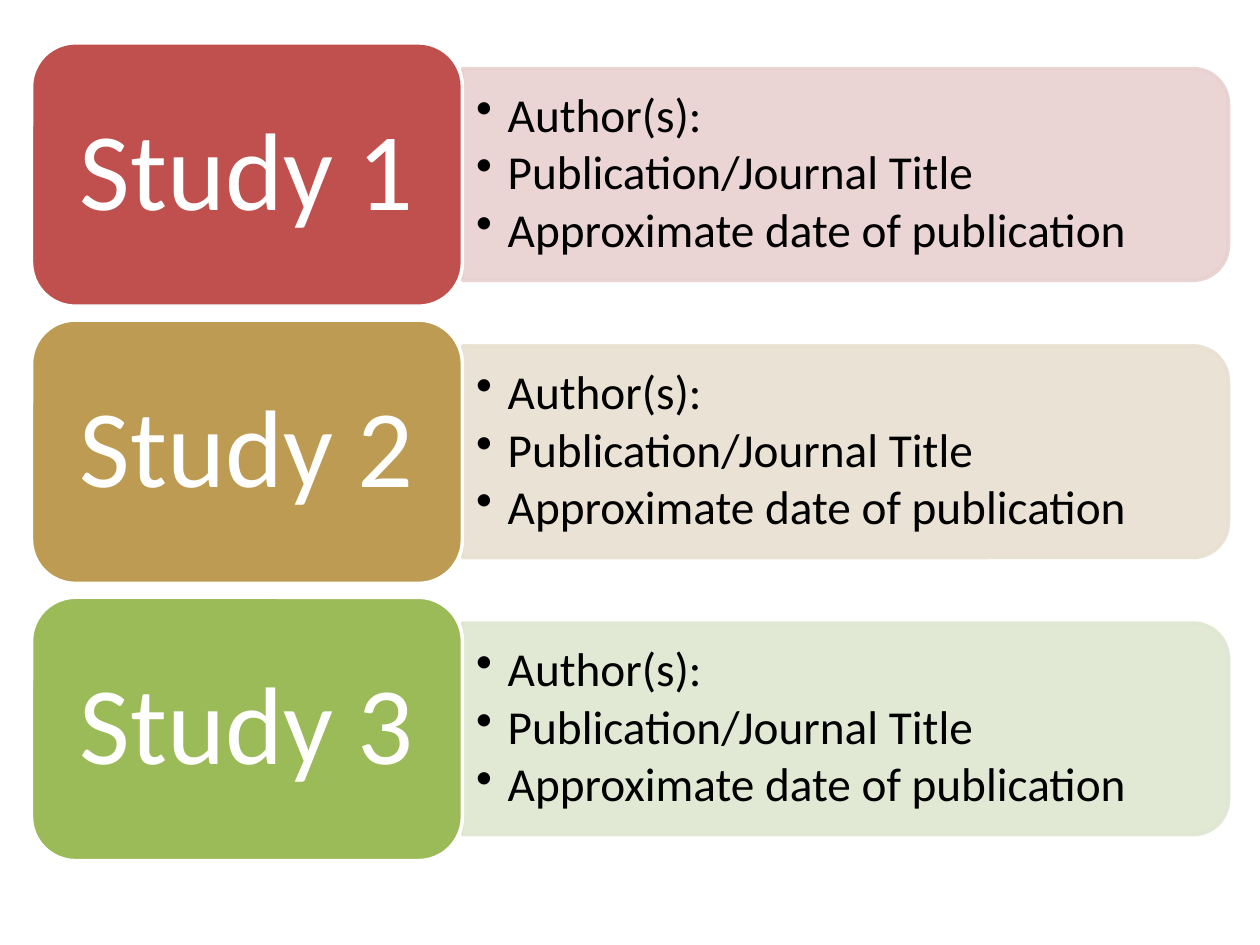
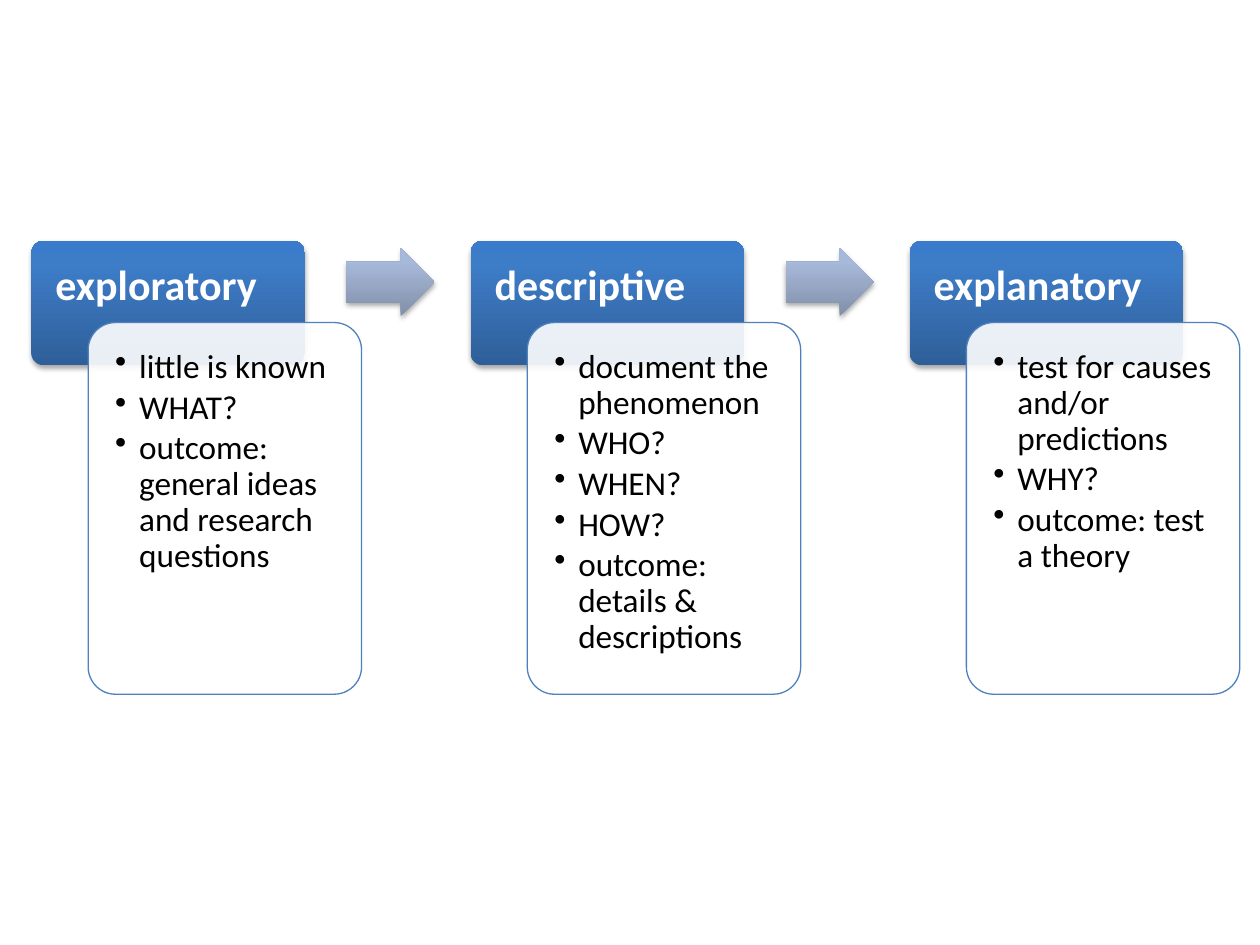
"""Build two diagram slides: a list of three studies and the three kinds of research."""
from lxml.etree import SubElement
from pptx import Presentation
from pptx.dml.color import RGBColor
from pptx.enum.shapes import MSO_SHAPE as Preset
from pptx.enum.text import MSO_ANCHOR as Anchor, PP_ALIGN as Align
from pptx.oxml.ns import qn
from pptx.util import Inches, Pt

COLORS = {
    "white": "FFFFFF", "black": "000000", "outline": "4F81BD",
    "red": "C0504D", "red_tint": "E8D0D0",
    "gold": "BD9B53", "gold_tint": "E8E1D1",
    "green": "9BBB59", "green_tint": "DEE7D1",
    "label_low": "2F5F99", "label_mid": "3D7CC7", "label_high": "3A7CCB",
    "arrow_low": "818FA8", "arrow_mid": "A7B9DA", "arrow_high": "A7BADC",
}
FONT = "Calibri"
MARGIN = 0.25


def add_block(page, preset, at, fill, line=None, weight=0, opacity=100, line_opacity=100, adjust=()):
    """Add a shape with a plain fill, or a shaded one with a shadow if fill names a gradient."""
    block = page.shapes.add_shape(preset, *map(Inches, at))
    block.shadow.inherit = False
    for index, value in enumerate(adjust):
        block.adjustments[index] = value
    properties = block._element.spPr
    if fill in COLORS:
        block.fill.solid()
        block.fill.fore_color.rgb = RGBColor.from_string(COLORS[fill])
    else:
        block.fill.gradient()
        block.fill.gradient_angle = 90
        stops = properties.find(".//" + qn("a:gsLst"))
        stops.clear()
        for name, place in (("low", 0), ("mid", 80), ("high", 100)):
            stop = SubElement(stops, qn("a:gs"), pos=str(place * 1000))
            SubElement(stop, qn("a:srgbClr"), val=COLORS[f"{fill}_{name}"])
        shadow = SubElement(properties.find(qn("a:effectLst")), qn("a:outerShdw"), blurRad=str(Pt(3.1)),
                            dist=str(Pt(1.8)), dir="5400000", rotWithShape="0")
        shade = SubElement(shadow, qn("a:srgbClr"), val=COLORS["black"])
        SubElement(shade, qn("a:alpha"), val="35000")
    if line:
        block.line.color.rgb = RGBColor.from_string(COLORS[line])
        block.line.width = Pt(weight)
    else:
        block.line.fill.background()
    for target, share in (("a:solidFill", opacity), ("a:ln/a:solidFill", line_opacity)):
        if share < 100:
            steps = "/".join(qn(step) for step in f"{target}/a:srgbClr".split("/"))
            SubElement(properties.find(steps), qn("a:alpha"), val=str(share * 1000))
    return block


def add_text(page, at, lines, size, color, insets, anchor=Anchor.TOP, align=Align.LEFT, bold=False, indent=0):
    """Add a text box with one paragraph a line, bulleted where an indent is given."""
    frame = page.shapes.add_textbox(*map(Inches, at)).text_frame
    sides = ("margin_left", "margin_top", "margin_right", "margin_bottom")
    settings = {"word_wrap": True, "vertical_anchor": anchor, **dict(zip(sides, map(Inches, insets)))}
    for name, value in settings.items():
        setattr(frame, name, value)
    for number, line in enumerate(lines):
        para = frame.add_paragraph() if number else frame.paragraphs[0]
        span = para.add_run()
        span.text = line
        para.alignment = align
        para.line_spacing = 0.9
        for name, value in {"name": FONT, "size": Pt(size), "bold": bold}.items():
            setattr(span.font, name, value)
        span.font.color.rgb = RGBColor.from_string(COLORS[color])
        if indent:
            para.level = 1
            para.space_after = Pt(round(size * 0.14, 1))
            form = para._p.get_or_add_pPr()
            form.set("marL", str(Inches(indent)))
            form.set("indent", str(-Inches(indent)))
            SubElement(form, qn("a:buChar"), char="•")


deck = Presentation()
deck.slide_width, deck.slide_height = Inches(10), Inches(7.5)
blank = deck.slide_layouts[6]

studies = deck.slides.add_slide(blank)
DETAILS = ["Author(s):", "Publication/Journal Title", "Approximate date of publication"]
ROW_TOP, ROW_STEP = 0.34, 2.2
CARD_W, CARD_H, CARD_PAD = 3.42, 2.09, 0.1
PANEL_W, PANEL_H = 6.08, 1.68
panel_left = MARGIN + CARD_W

for row, color in enumerate(("red", "gold", "green")):
    top = ROW_TOP + row * ROW_STEP
    middle = top + CARD_H / 2
    panel_at = (panel_left + (PANEL_W - PANEL_H) / 2, middle - PANEL_W / 2, PANEL_H, PANEL_W)
    panel = add_block(studies, Preset.ROUND_2_SAME_RECTANGLE, panel_at, f"{color}_tint",
                      f"{color}_tint", 2, opacity=90, line_opacity=90)
    panel.rotation = 90
    add_text(studies, (panel_left, middle - 0.755, 6, 1.51), DETAILS, 27, "black",
             (0.11, 0.06, 0.11, 0.06), Anchor.MIDDLE, indent=0.25)
    add_block(studies, Preset.ROUNDED_RECTANGLE, (MARGIN, top, CARD_W, CARD_H), color, "white", 2)
    name_at = (MARGIN + CARD_PAD, top + CARD_PAD, CARD_W - 2 * CARD_PAD, CARD_H - 2 * CARD_PAD)
    add_text(studies, name_at, [f"Study {row + 1}"], 63, "white",
             (0.26, 0.13, 0.26, 0.13), Anchor.MIDDLE, Align.CENTER)

research = deck.slides.add_slide(blank)
KINDS = {
    "exploratory": ["little is known", "WHAT?", "outcome: general ideas and research questions"],
    "descriptive": ["document the phenomenon", "WHO?", "WHEN?", "HOW?", "outcome: details & descriptions"],
    "explanatory": ["test for causes and/or predictions", "WHY?", "outcome: test a theory"],
}
COLUMN_STEP, COLUMN_W = 3.485, 2.17
LABEL_TOP, LABEL_H, HEADING_H = 1.91, 0.99, 0.66
NOTE_SHIFT, NOTE_TOP, NOTE_H, NOTE_PAD = 0.45, 2.56, 2.95, 0.065
ARROW_SHIFT, ARROW_W, ARROW_H = 2.5, 0.7, 0.54

for column, (kind, points) in enumerate(KINDS.items()):
    left = MARGIN + column * COLUMN_STEP
    note_left = left + NOTE_SHIFT
    add_block(research, Preset.ROUNDED_RECTANGLE, (left, LABEL_TOP, COLUMN_W, LABEL_H), "label", adjust=[0.1])
    add_text(research, (left, LABEL_TOP, COLUMN_W, HEADING_H), [kind], 24, "white",
             (0.19, 0.19, 0.19, 0.1), bold=True)
    add_block(research, Preset.ROUNDED_RECTANGLE, (note_left, NOTE_TOP, COLUMN_W, NOTE_H), "white",
              "outline", 0.75, opacity=90, adjust=[0.1])
    note_at = (note_left + NOTE_PAD, NOTE_TOP + NOTE_PAD, COLUMN_W - 2 * NOTE_PAD, NOTE_H - 2 * NOTE_PAD)
    add_text(research, note_at, points, 19, "black", (0.15, 0.15, 0.15, 0.15), indent=0.19)
    if column < len(KINDS) - 1:
        arrow_at = (left + ARROW_SHIFT, LABEL_TOP + (HEADING_H - ARROW_H) / 2, ARROW_W, ARROW_H)
        add_block(research, Preset.RIGHT_ARROW, arrow_at, "arrow", adjust=[0.6, 0.5])

deck.save("out.pptx")
